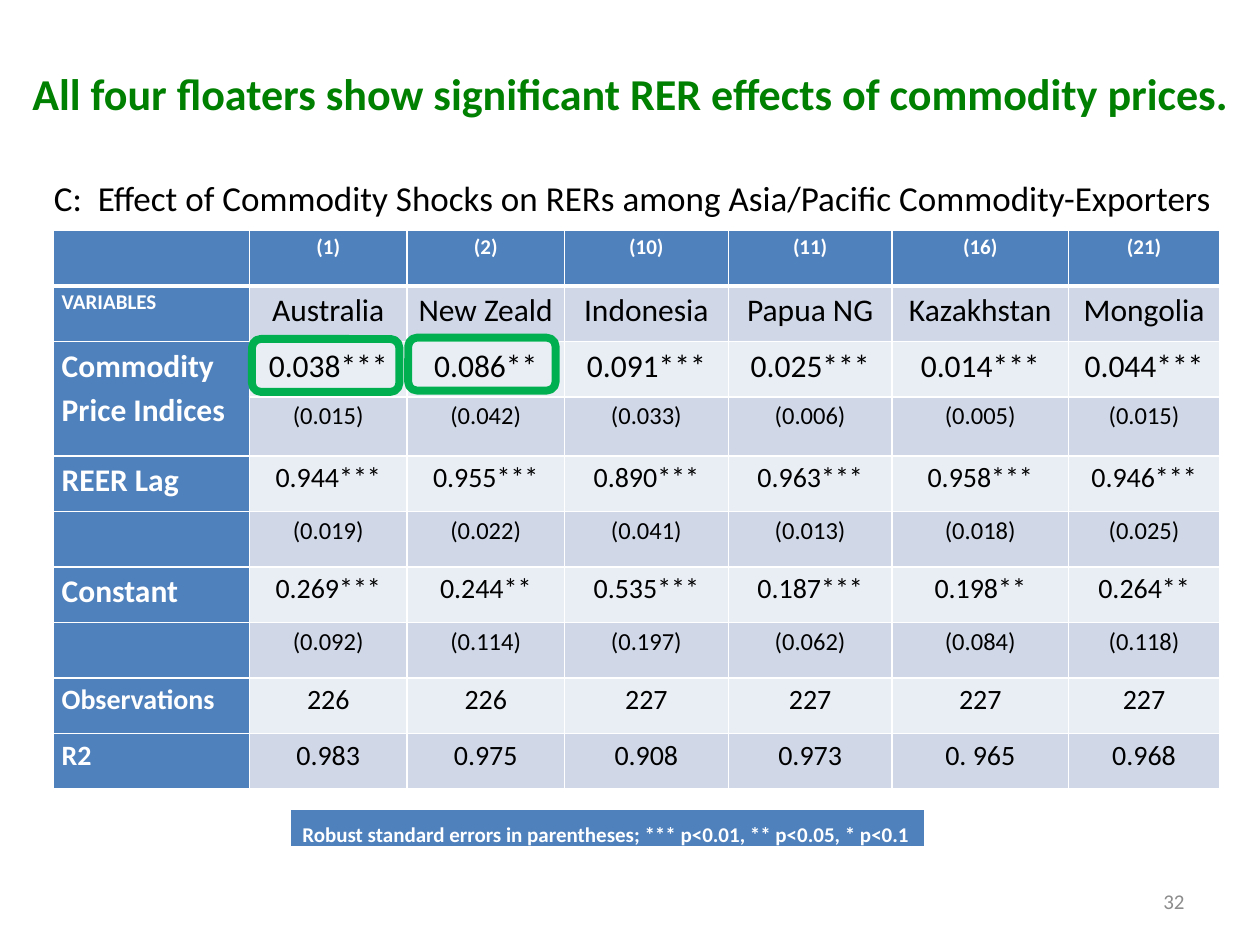
"""Build a slide with a regression table of commodity price effects on RERs."""
from dataclasses import dataclass

from lxml import etree
from pptx import Presentation
from pptx.dml.color import RGBColor
from pptx.enum.shapes import MSO_SHAPE
from pptx.enum.text import MSO_ANCHOR, PP_ALIGN
from pptx.oxml.ns import qn
from pptx.util import Inches, Pt

LEFT, CENTER, RIGHT = PP_ALIGN.LEFT, PP_ALIGN.CENTER, PP_ALIGN.RIGHT
TOP, MIDDLE = MSO_ANCHOR.TOP, MSO_ANCHOR.MIDDLE
ROUNDED = MSO_SHAPE.ROUNDED_RECTANGLE
PLAIN_TABLE = "{2D5ABB26-0587-4C30-8999-92F81FD0307C}"


@dataclass(frozen=True)
class Theme:
    font: str = "Calibri"
    title: str = "008000"
    ink: str = "000000"
    white: str = "FFFFFF"
    header: str = "4F81BD"
    bands: tuple = ("E9EDF4", "D0D8E8")
    highlight: str = "00B050"
    number: str = "8C8C8C"
    title_size: float = 25.2
    caption_size: int = 20
    large: int = 18
    medium: int = 16
    error: int = 14
    small: int = 12


theme = Theme()


def write(para, text, size, color, bold=False, align=LEFT):
    para.text = text
    para.alignment = align
    para.font.name = theme.font
    para.font.size = Pt(size)
    para.font.bold = bold
    para.font.color.rgb = RGBColor.from_string(color)


def style_cell(cell, fill, bottom=1):
    cell.margin_left = cell.margin_right = Inches(0.07)
    cell.margin_top = cell.margin_bottom = 0
    cell.text_frame.paragraphs[0].line_spacing = 1.15
    properties = cell._tc.get_or_add_tcPr()
    for side, points in (("lnL", 1), ("lnR", 1), ("lnT", 1), ("lnB", bottom)):
        line = etree.SubElement(properties, qn(f"a:{side}"), w=str(Pt(points)))
        solid = etree.SubElement(line, qn("a:solidFill"))
        etree.SubElement(solid, qn("a:srgbClr"), val=theme.white)
    cell.fill.solid()
    cell.fill.fore_color.rgb = RGBColor.from_string(fill)


deck = Presentation()
deck.slide_width, deck.slide_height = Inches(10), Inches(7.5)
column, row = deck.slide_width / 100, deck.slide_height / 100
page = deck.slides.add_slide(deck.slide_layouts[6])

# text, left, top, width, height, size, color, bold, align, anchor
texts = [
    ("All four floaters show significant RER effects of commodity prices.",
     0.9, 4, 98.3, 11.6, theme.title_size, theme.title, True, CENTER, MIDDLE),
    ("C:  Effect of Commodity Shocks on RERs among Asia/Pacific Commodity-Exporters",
     3.3, 18, 96.7, 5.87, theme.caption_size, theme.ink, False, LEFT, TOP),
    ("32", 71.7, 92.67, 23.3, 5.33, theme.small, theme.number, False, RIGHT, MIDDLE),
]
for text, left, top, width, height, size, color, bold, align, anchor in texts:
    box = page.shapes.add_textbox(int(left * column), int(top * row),
                                  int(width * column), int(height * row))
    box.text_frame.word_wrap = True
    box.text_frame.vertical_anchor = anchor
    write(box.text_frame.paragraphs[0], text, size, color, bold, align)

# label, label size, values, value size
results = [
    ("", theme.small, ["(1)", "(2)", "(10)", "(11)", "(16)", "(21)"], theme.small),
    ("VARIABLES", theme.small,
     ["Australia", "New Zeald", "Indonesia", "Papua NG", "Kazakhstan", "Mongolia"], theme.large),
    ("Commodity Price Indices", theme.large,
     ["0.038***", "0.086**", "0.091***", "0.025***", "0.014***", "0.044***"], theme.large),
    ("", theme.large,
     ["(0.015)", "(0.042)", "(0.033)", "(0.006)", "(0.005)", "(0.015)"], theme.error),
    ("REER Lag", theme.large,
     ["0.944***", "0.955***", "0.890***", "0.963***", "0.958***", "0.946***"], theme.medium),
    ("", theme.large,
     ["(0.019)", "(0.022)", "(0.041)", "(0.013)", "(0.018)", "(0.025)"], theme.error),
    ("Constant", theme.large,
     ["0.269***", "0.244**", "0.535***", "0.187***", "0.198**", "0.264**"], theme.medium),
    ("", theme.large,
     ["(0.092)", "(0.114)", "(0.197)", "(0.062)", "(0.084)", "(0.118)"], theme.error),
    ("Observations", theme.medium, ["226", "226", "227", "227", "227", "227"], theme.medium),
    ("R2", theme.medium,
     ["0.983", "0.975", "0.908", "0.973", "0. 965", "0.968"], theme.medium),
]
note = "Robust standard errors in parentheses; *** p<0.01, ** p<0.05, * p<0.1"
column_widths = [15.6, 12.5, 12.5, 13, 13, 14, 12]
row_height, error_row, error_height = 5.87, 3, 6.27

tables = []
for rows, columns, left, top, width, height in (
        (len(results), len(column_widths), 4.2, 24.4, sum(column_widths), 58.9),
        (1, 1, 23, 85.6, 50.4, 3.87)):
    frame = page.shapes.add_table(rows, columns, int(left * column), int(top * row),
                                  int(width * column), int(height * row))
    table = frame.table
    table.first_row = table.horz_banding = False
    table._tbl.tblPr.find(qn("a:tableStyleId")).text = PLAIN_TABLE
    tables.append(table)
result_table, note_table = tables

for index, width in enumerate(column_widths):
    result_table.columns[index].width = int(width * column)
for r, (label, label_size, values, value_size) in enumerate(results):
    result_table.rows[r].height = int((error_height if r == error_row else row_height) * row)
    for c, text in enumerate([label, *values]):
        heading = r == 0 or c == 0
        cell = result_table.cell(r, c)
        write(cell.text_frame.paragraphs[0], text, value_size if c else label_size,
              theme.white if heading else theme.ink, heading, CENTER if c else LEFT)
        style_cell(cell, theme.header if heading else theme.bands[r % 2], 1 if r else 3)
result_table.cell(error_row - 1, 0).merge(result_table.cell(error_row, 0))

note_cell = note_table.cell(0, 0)
write(note_cell.text_frame.paragraphs[0], note, theme.small, theme.white, True)
style_cell(note_cell, theme.header, 3)
note_cell.margin_top, note_cell.margin_left = Inches(0.08), Inches(0.1)

for left, top in ((20, 35.87), (32.4, 35.73)):
    highlight = page.shapes.add_shape(ROUNDED, int(left * column), int(top * row),
                                      int(11.7 * column), int(5.6 * row))
    highlight.shadow.inherit = False
    highlight.fill.background()
    highlight.line.color.rgb = RGBColor.from_string(theme.highlight)
    highlight.line.width = Pt(4.5)

deck.save("out.pptx")
